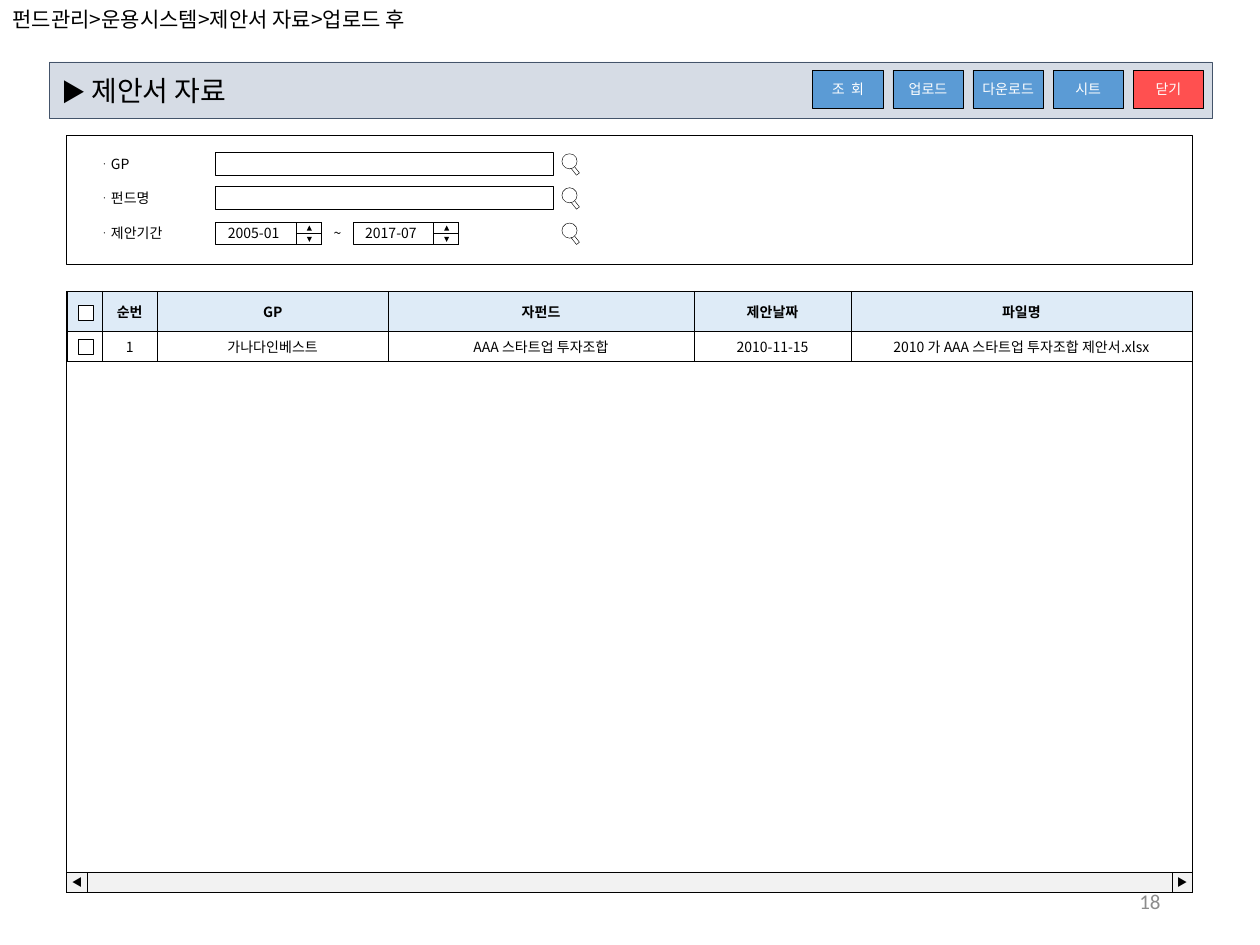
from dataclasses import dataclass
from itertools import product

from lxml.etree import SubElement
from pptx import Presentation
from pptx.dml.color import RGBColor
from pptx.enum.shapes import MSO_SHAPE as Kind
from pptx.enum.text import MSO_ANCHOR as Anchor, MSO_AUTO_SIZE as Fit, PP_ALIGN as Align
from pptx.oxml.ns import qn
from pptx.util import Inches, Pt

COLS, ROWS = 100, 75
UNIT = Inches(10) // COLS


@dataclass(frozen=True)
class Theme:
    font: str = "Noto Sans CJK KR"
    latin: str = "Calibri"
    ink: str = "000000"
    white: str = "FFFFFF"
    bar: str = "D6DCE5"
    edge: str = "44546A"
    blue: str = "5B9BD5"
    red: str = "FF5050"
    head: str = "DEEBF7"
    track: str = "F2F2F2"
    gray: str = "8C8C8C"
    tiny: int = 6
    small: int = 8
    path_size: int = 12
    mark: int = 14
    title: int = 16
    line: float = 0.25


T = Theme()


@dataclass(frozen=True)
class Box:
    """A place on the slide, in grid columns and rows."""
    x: float
    y: float
    w: float
    h: float

    def sub(self, x, y, w, h):
        return Box(self.x + x, self.y + y, w, h)

    def emu(self):
        return [round(n * UNIT) for n in (self.x, self.y, self.w, self.h)]


def style(para, size, color=T.ink, align=Align.LEFT, bold=False, face=T.font):
    para.alignment = align
    font = para.font
    font.size, font.bold = Pt(size), bold
    font.color.rgb = RGBColor.from_string(color)
    font.name = face
    SubElement(para._p.pPr.find(qn("a:defRPr")), qn("a:ea"), typeface=face)


def write(frame, text, size=T.small, pad=(0.1, 0.05), **look):
    frame.word_wrap = True
    frame.auto_size = Fit.NONE
    frame.vertical_anchor = Anchor.MIDDLE
    frame.margin_left = frame.margin_right = Inches(pad[0])
    frame.margin_top = frame.margin_bottom = Inches(pad[1])
    para = frame.paragraphs[0]
    para.text = text
    style(para, size, **look)


def label(slide, box, text, **look):
    write(slide.shapes.add_textbox(*box.emu()).text_frame, text, **look)


def draw(slide, box, fill=None, line=T.ink, kind=Kind.RECTANGLE, turn=0):
    shape = slide.shapes.add_shape(kind, *box.emu())
    shape.shadow.inherit = False
    shape.rotation = turn
    if fill:
        shape.fill.solid()
        shape.fill.fore_color.rgb = RGBColor.from_string(fill)
    else:
        shape.fill.background()
    if line:
        shape.line.color.rgb = RGBColor.from_string(line)
        shape.line.width = Pt(T.line)
    else:
        shape.line.fill.background()
    return shape


def crumbs(slide, box):
    title = slide.shapes.title
    title.left, title.top, title.width, title.height = box.emu()
    write(title.text_frame, "펀드관리>운용시스템>제안서 자료>업로드 후", T.path_size)


def header(slide, box):
    frame = draw(slide, box, T.bar, T.edge).text_frame
    write(frame, "▶ ", T.title)
    para = frame.paragraphs[0]
    para.runs[0].font.size = Pt(T.mark)
    para.add_run().text = "제안서 자료"
    names = "조  회", "업로드", "다운로드", "시트", "닫기"
    for i, name in enumerate(names):
        fill = T.red if name == "닫기" else T.blue
        button = draw(slide, box.sub(60.6 + 6.36 * i, 0.7, 5.6, 3), fill)
        write(button.text_frame, name, pad=(0.04, 0.04),
              color=T.white, align=Align.CENTER)


def lens(slide, box):
    draw(slide, box.sub(0.3, 1, 1.2, 0.3), turn=51.8)
    draw(slide, box.sub(0, 0, 1.2, 1.2), T.white, kind=Kind.OVAL)


def spinner(slide, box, text):
    write(draw(slide, box).text_frame, text)
    step = box.sub(box.w - 2, 0, 2, box.h)
    draw(slide, step)
    draw(slide, step.sub(0, 0.9, 2, 0.9))
    for y, turn in (0.3, 0), (1.2, 180):
        draw(slide, step.sub(0.85, y, 0.4, 0.4), T.ink, None,
             Kind.ISOSCELES_TRIANGLE, turn)


def search(slide, box):
    draw(slide, box)
    for name, y in ("GP", 1.4), ("펀드명", 4.1), ("제안기간", 6.9):
        label(slide, box.sub(1.5, y - 0.15, 10.3, 2.1), "ᆞ" + name)
        lens(slide, box.sub(39.3, y + 0.1, 1.5, 1.7))
        field = box.sub(11.8, y, 26.8, 1.8)
        if name != "제안기간":
            draw(slide, field)
            continue
        spinner(slide, field.sub(0, 0, 8.4, 1.8), "2005-01")
        label(slide, field.sub(8.4, 0, 2.4, 1.8), "~")
        spinner(slide, field.sub(10.9, 0, 8.4, 1.8), "2017-07")


def border(cell):
    props = cell._tc.get_or_add_tcPr()
    for i, side in enumerate(("lnL", "lnR", "lnT", "lnB")):
        line = props.makeelement(qn("a:" + side), {"w": str(Pt(T.line))})
        SubElement(SubElement(line, qn("a:solidFill")), qn("a:srgbClr"), val=T.ink)
        props.insert(i, line)


def listing(slide, box):
    draw(slide, box)
    rows = (("", "순번", "GP", "자펀드", "제안날짜", "파일명"),
            ("", "1", "가나다인베스트", "AAA 스타트업 투자조합", "2010-11-15",
             "2010 가 AAA 스타트업 투자조합 제안서.xlsx"))
    wide, high = (2.8, 4.4, 18.3, 24.3, 12.45, 27.05), (3.2, 2.4)
    area = box.sub(0, 0, box.w, sum(high))
    table = slide.shapes.add_table(len(high), len(wide), *area.emu()).table
    table.horz_banding = False
    for col, w in zip(table.columns, wide):
        col.width = round(w * UNIT)
    for row, h in zip(table.rows, high):
        row.height = round(h * UNIT)
    for r, c in product(range(len(high)), range(len(wide))):
        cell = table.cell(r, c)
        cell.fill.solid()
        cell.fill.fore_color.rgb = RGBColor.from_string(T.white if r else T.head)
        cell.vertical_anchor = Anchor.MIDDLE
        cell.margin_left = cell.margin_right = Inches(0.05)
        cell.margin_top = cell.margin_bottom = 0
        para = cell.text_frame.paragraphs[0]
        para.text = rows[r][c]
        style(para, T.small, align=Align.CENTER, bold=r == 0)
        border(cell)
    for y in 1.1, 3.8:
        draw(slide, box.sub(0.9, y, 1.2, 1.2), T.white)
    scroll(slide, box.sub(0, box.h - 1.6, box.w, 1.6))


def scroll(slide, box):
    draw(slide, box, T.track)
    ends = (0, "◀", Align.LEFT), (box.w - box.h, "▶", Align.RIGHT)
    for x, mark, align in ends:
        end = draw(slide, box.sub(x, 0, box.h, box.h))
        write(end.text_frame, mark, T.tiny, pad=(0.04, 0), align=align)


def main():
    deck = Presentation()
    deck.slide_width, deck.slide_height = COLS * UNIT, ROWS * UNIT
    slide = deck.slides.add_slide(deck.slide_layouts[5])
    crumbs(slide, Box(0, -0.1, COLS, 3.3))
    header(slide, Box(3.9, 4.9, 92.3, 4.5))
    search(slide, Box(5.3, 10.7, 89.3, 10.3))
    listing(slide, Box(5.3, 23.1, 89.3, 47.7))
    label(slide, Box(70.6, 69.5, 22.5, 4), "18", size=T.path_size,
          color=T.gray, align=Align.RIGHT, face=T.latin)
    deck.save("out.pptx")


if __name__ == "__main__":
    main()
